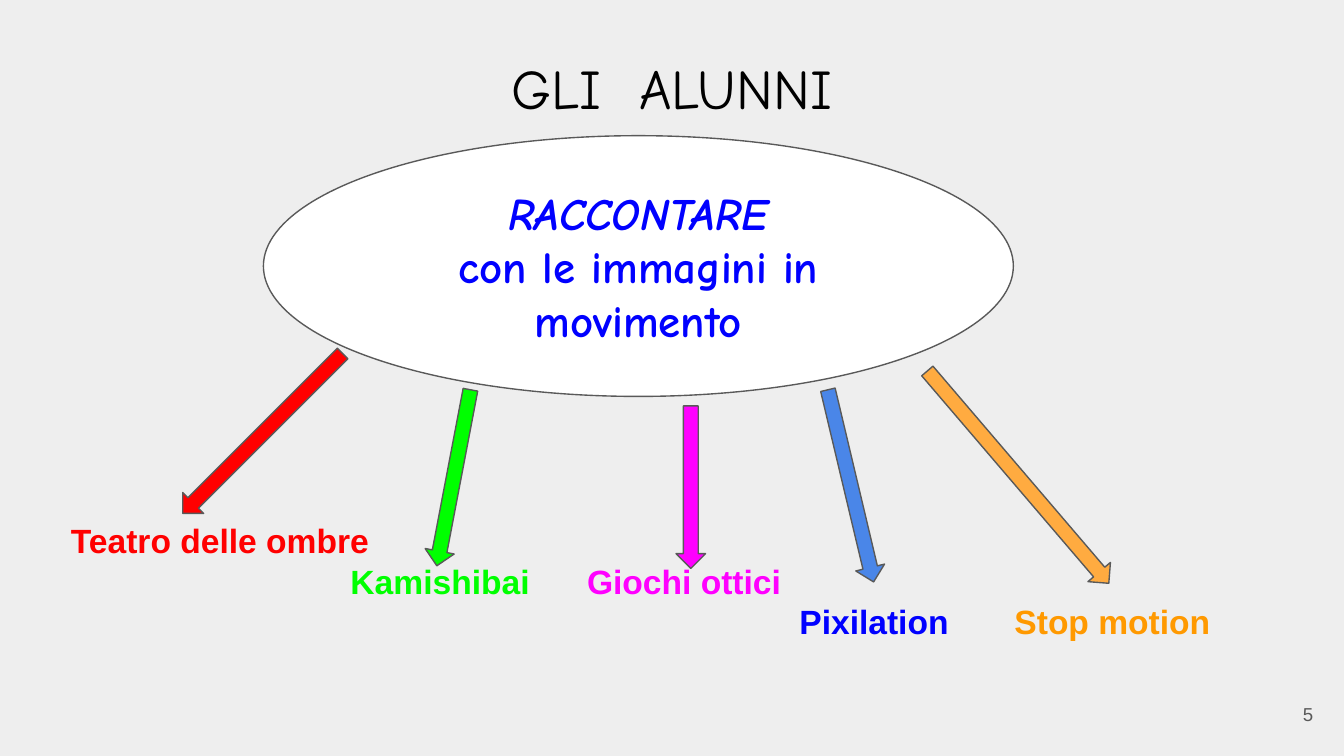
from math import atan2, degrees, hypot
from lxml.etree import SubElement
from pptx import Presentation
from pptx.dml.color import RGBColor
from pptx.enum.shapes import MSO_SHAPE as Kind
from pptx.enum.text import MSO_ANCHOR as Anchor, PP_ALIGN as Align
from pptx.oxml.ns import qn
from pptx.util import Inches, Pt

WIDE = 10
HIGH = WIDE * 9 / 16
GREY, BLUE = "595959", "0000FF"
COMIC = "Comic Neue"
THICK = 0.22

TITLE = [[("GLI  ALUNNI", "000000", False)]]
THEME = [[("RACCONTARE", BLUE, True)],
         [("con le immagini in movimento", BLUE, False)]]
PAGE = [[("5", GREY, False)]]
TOPICS = [
    [("Teatro delle ombre", "FF0000", False)],
    [("\tKamishibai", "00FF00", False), ("\tGiochi ottici", "FF00FF", False)],
    [("\tPixilation", BLUE, False), ("\tStop motion", "FF9900", False)],
]
STOPS = [[], [2.08, 3.84], [5.42, 7.02]]
ARROWS = [
    ((2.55, 2.63), (1.36, 3.82), "FF0000"),
    ((3.5, 2.9), (3.25, 4.21), "00FF00"),
    ((5.14, 3.02), (5.14, 4.23), "FF00FF"),
    ((6.9, 2.76), (8.25, 4.34), "FFAB40"),
    ((6.16, 2.9), (6.5, 4.33), "4A86E8"),
]


def tint(code):
    return RGBColor.from_string(code)


def write(shape, rows, size, face="Arial", bold=False, align=Align.LEFT,
          anchor=Anchor.TOP, stops=()):
    frame = shape.text_frame
    frame.word_wrap = True
    frame.vertical_anchor = anchor
    frame.margin_left = frame.margin_right = Inches(0.1)
    frame.margin_top = frame.margin_bottom = Inches(0.1)
    for i, row in enumerate(rows):
        para = frame.paragraphs[0] if i == 0 else frame.add_paragraph()
        para.alignment = align
        if stops and stops[i]:
            tabs = SubElement(para._p.get_or_add_pPr(), qn("a:tabLst"))
            for stop in stops[i]:
                SubElement(tabs, qn("a:tab"), pos=str(Inches(stop)), algn="l")
        for text, color, slant in row:
            run = para.add_run()
            run.text = text
            font = run.font
            font.name, font.size = face, Pt(size)
            font.bold, font.italic = bold, slant
            font.color.rgb = tint(color)


def box(*area):
    return slide.shapes.add_textbox(*map(Inches, area))


def draw(kind, area, fill):
    shape = slide.shapes.add_shape(kind, *map(Inches, area))
    shape.shadow.inherit = False
    shape.fill.solid()
    shape.fill.fore_color.rgb = tint(fill)
    shape.line.color.rgb = tint(GREY)
    shape.line.width = Pt(0.75)
    return shape


deck = Presentation()
deck.slide_width, deck.slide_height = Inches(WIDE), Inches(HIGH)
slide = deck.slides.add_slide(deck.slide_layouts[6])
slide.background.fill.solid()
slide.background.fill.fore_color.rgb = tint("EEEEEE")

write(box(9.27, 5.1, 0.6, 0.43), PAGE, 10, align=Align.RIGHT, anchor=Anchor.MIDDLE)
oval = draw(Kind.OVAL, (1.96, 1.01, 5.58, 1.94), "FFFFFF")
write(oval, THEME, 24, COMIC, True, Align.CENTER, Anchor.MIDDLE)
write(box(0.43, 3.77, 9.13, 1.72), TOPICS, 18, bold=True, stops=STOPS)
write(box(2.7, 0.3, 4.6, 0.71), TITLE, 30, COMIC, align=Align.CENTER)

for (x1, y1), (x2, y2), color in ARROWS:
    size = hypot(x2 - x1, y2 - y1)
    left, top = (x1 + x2 - THICK) / 2, (y1 + y2 - size) / 2
    arrow = draw(Kind.DOWN_ARROW, (left, top, THICK, size), color)
    arrow.rotation = degrees(atan2(x1 - x2, y2 - y1))

deck.save("out.pptx")
